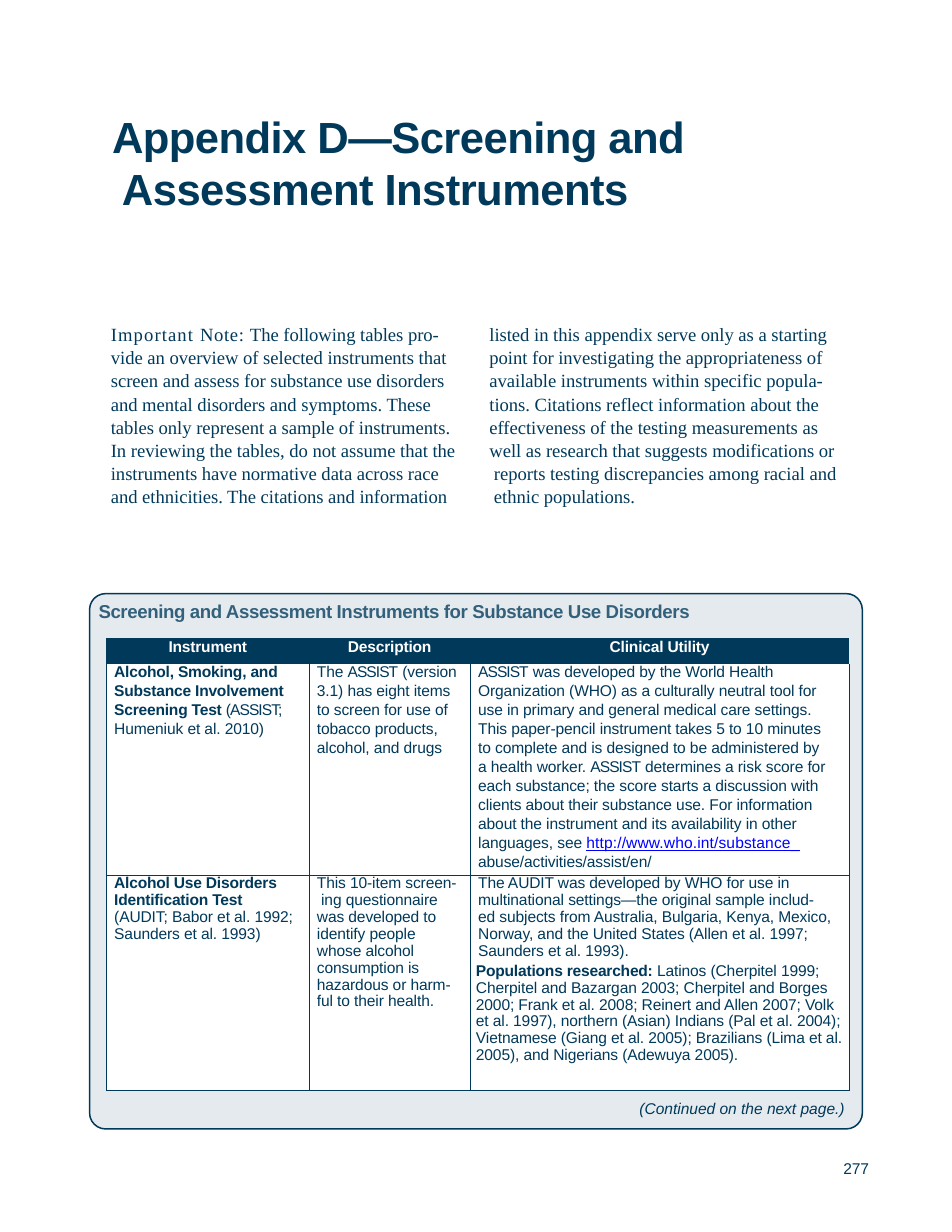
from copy import deepcopy
from dataclasses import dataclass
from itertools import zip_longest

from lxml import etree
from pptx import Presentation
from pptx import util as u
from pptx.dml.color import RGBColor
from pptx.enum import shapes, text
from pptx.oxml.ns import qn


@dataclass(frozen=True)
class Theme:
    navy: str = "00395A"
    slate: str = "33617B"
    white: str = "FFFFFF"
    link: str = "0000FF"
    sans: str = "Arial"
    serif: str = "Times New Roman"
    title: float = 28
    body: float = 12
    table: float = 10
    rule: float = 0.5
    frame: float = 0.96


THEME = Theme()
COLUMNS, ROWS = 85, 110
CELL = u.Inches(0.1)

SANS = dict(font=THEME.sans, size=THEME.table, color=THEME.navy, track=-0.05)
TITLE = SANS | dict(size=THEME.title, bold=True, track=-0.35)
SERIF = SANS | dict(font=THEME.serif, size=THEME.body, track=-0.03)
CAPTION = SANS | dict(size=THEME.body, color=THEME.slate, bold=True, track=-0.25)
HEADING = SANS | dict(color=THEME.white, bold=True, track=-0.1)
BOLD = dict(bold=True, track=-0.1)
ASSIST = ("ASSIST", dict(track=-0.6))

NOTE_LEFT = [
    ("Important ", dict(track=0.7)), ("Note: ", dict(track=0.4)),
    "The following tables pro-\nvide an overview of selected instruments that\n"
    "screen and assess for substance use disorders\n"
    "and mental disorders and symptoms. These\n"
    "tables only represent a sample of instruments.\n"
    "In reviewing the tables, do not assume that the\n"
    "instruments have normative data across race\n"
    "and ethnicities. The citations and information",
]
NOTE_RIGHT = [
    "listed in this appendix serve only as a starting\n"
    "point for investigating the appropriateness of\n"
    "available instruments within specific popula-\n"
    "tions. Citations reflect information about the\n"
    "effectiveness of the testing measurements as\n"
    "well as research that suggests modifications or\n"
    " reports testing discrepancies among racial and\n"
    " ethnic populations.",
]

HEADINGS = ["Instrument", "Description", "Clinical Utility"]
ASSIST_NAME = [
    [("Alcohol, Smoking, and", BOLD)],
    [("Substance Involvement", BOLD)],
    [("Screening Test ", BOLD), ("(ASSIST;", dict(track=-0.6))],
    ["Humeniuk et al. 2010)"],
]
ASSIST_DESCRIPTION = [
    ["The ", ASSIST, " (version"],
    ["3.1) has eight items"],
    ["to screen for use of"],
    ["tobacco products,"],
    ["alcohol, and drugs"],
]
ASSIST_UTILITY = [
    [ASSIST, " was developed by the World Health"],
    ["Organization (WHO) as a culturally neutral tool for"],
    ["use in primary and general medical care settings."],
    ["This paper-pencil instrument takes 5 to 10 minutes"],
    ["to complete and is designed to be administered by"],
    ["a health worker. ", ASSIST, " determines a risk score for"],
    ["each substance; the score starts a discussion with"],
    ["clients about their substance use. For information"],
    ["about the instrument and its availability in other"],
    ["languages, see ",
     ("http://www.who.int/substance_", dict(color=THEME.link, underline=True, track=0.1))],
    ["abuse/activities/assist/en/"],
]
AUDIT = [
    [[("Alcohol Use Disorders\nIdentification Test\n", BOLD),
      "(AUDIT; Babor et al. 1992;\nSaunders et al. 1993)"]],
    [["This 10-item screen-\n ing questionnaire\nwas developed to\nidentify people\n"
      "whose alcohol\nconsumption is\nhazardous or harm-\nful to their health."]],
    [["The AUDIT was developed by WHO for use in\n"
      "multinational settings—the original sample includ-\n"
      "ed subjects from Australia, Bulgaria, Kenya, Mexico,\n"
      "Norway, and the United States (Allen et al. 1997;\n"
      "Saunders et al. 1993)."],
     [("Populations researched: ", BOLD),
      "Latinos (Cherpitel 1999;\nCherpitel and Bazargan 2003; Cherpitel and Borges\n"
      "2000; Frank et al. 2008; Reinert and Allen 2007; Volk\n"
      "et al. 1997), northern (Asian) Indians (Pal et al. 2004);\n"
      "Vietnamese (Giang et al. 2005); Brazilians (Lima et al.\n"
      "2005), and Nigerians (Adewuya 2005)."]],
]


def grid(*cells):
    return [round(cell * CELL) for cell in cells]


def add_runs(paragraph, runs, style):
    for entry in runs:
        words, changes = (entry, {}) if isinstance(entry, str) else entry
        look = style | changes
        for index, line in enumerate(words.split("\n")):
            if index:
                paragraph.add_line_break()
                paragraph._p[-1].append(deepcopy(run.font._element))
            if not line and index:
                continue
            run = paragraph.add_run()
            run.text = line
            font = run.font
            font.name, font.size = look["font"], u.Pt(look["size"])
            font.bold = look.get("bold", False)
            font.italic = look.get("italic", False)
            font.underline = look.get("underline", False)
            font.color.rgb = RGBColor.from_string(look["color"])
            font._element.set("spc", str(round(look["track"] * 100)))


def format_paragraph(paragraph, spacing=None, before=0, indent=0, align=text.PP_ALIGN.LEFT):
    paragraph.alignment = align
    paragraph.space_before = u.Pt(before)
    if spacing:
        paragraph.line_spacing = spacing
    paragraph._p.get_or_add_pPr().set("marL", str(u.Inches(indent)))
    paragraph._p.get_or_add_pPr().set("indent", "0")


def prepare_frame(frame, top=0.01):
    frame.word_wrap = True
    frame.auto_size = text.MSO_AUTO_SIZE.NONE
    frame.vertical_anchor = text.MSO_ANCHOR.TOP
    frame.margin_left = frame.margin_right = frame.margin_bottom = 0
    frame.margin_top = u.Inches(top)


def add_title(slide, words, place):
    title = slide.shapes.title
    title.left, title.top, title.width, title.height = grid(*place)
    prepare_frame(title.text_frame, 0.03)
    heading = title.text_frame.paragraphs[0]
    format_paragraph(heading, u.Pt(33.2), 2.4, 0.01)
    add_runs(heading, [words], TITLE)


def add_text(slide, runs, place, style, **layout):
    frame = slide.shapes.add_textbox(*grid(*place)).text_frame
    prepare_frame(frame)
    format_paragraph(frame.paragraphs[0], indent=0.01, **layout)
    add_runs(frame.paragraphs[0], runs, style)
    return frame


def add_panel(slide, place):
    panel = slide.shapes.add_shape(shapes.MSO_SHAPE.ROUNDED_RECTANGLE, *grid(*place))
    panel.adjustments[0] = 0.03
    panel.shadow.inherit = False
    panel.fill.solid()
    panel.fill.fore_color.rgb = RGBColor.from_string(THEME.navy)
    tint = panel._element.spPr.find(f"{qn('a:solidFill')}/{qn('a:srgbClr')}")
    etree.SubElement(tint, qn("a:alpha"), val="10000")
    panel.line.color.rgb = RGBColor.from_string(THEME.navy)
    panel.line.width = u.Pt(THEME.frame)


def format_cell(cell, fill, ruled):
    cell.margin_left = cell.margin_right = cell.margin_bottom = 0
    cell.margin_top = 0
    properties = cell._tc.get_or_add_tcPr()
    for side in "LRTB":
        border = etree.SubElement(properties, qn(f"a:ln{side}"), w=str(u.Pt(THEME.rule)))
        if side in ruled:
            paint = etree.SubElement(border, qn("a:solidFill"))
            etree.SubElement(paint, qn("a:srgbClr"), val=THEME.navy)
        else:
            etree.SubElement(border, qn("a:noFill"))
    cell.fill.solid()
    cell.fill.fore_color.rgb = RGBColor.from_string(fill)


def add_instruments(slide, left, top):
    lines = list(zip_longest(ASSIST_NAME, ASSIST_DESCRIPTION, ASSIST_UTILITY))
    widths = [18.1, 14.4, 33.8]
    heights = [2.3] + [1.7] * (len(lines) - 1) + [1.9, 19.2]
    place = grid(left, top, sum(widths), sum(heights))
    table = slide.shapes.add_table(len(heights), len(widths), *place).table
    table.first_row = table.horz_banding = False
    for column, width in zip(table.columns, grid(*widths)):
        column.width = width
    for row, height in zip(table.rows, grid(*heights)):
        row.height = height
    last = len(lines)
    for index, heading in enumerate(HEADINGS):
        cell = table.cell(0, index)
        format_cell(cell, THEME.navy, "")
        paragraph = cell.text_frame.paragraphs[0]
        format_paragraph(paragraph, before=1.3, align=text.PP_ALIGN.CENTER)
        add_runs(paragraph, [heading], HEADING)
    for number, line in enumerate(lines, 1):
        for index, runs in enumerate(line):
            cell = table.cell(number, index)
            format_cell(cell, THEME.white, "LRB" if number == last else "LR")
            paragraph = cell.text_frame.paragraphs[0]
            format_paragraph(paragraph, u.Pt(11), 0.6 if number == 1 else 0, 0.07)
            add_runs(paragraph, runs or [], SANS)
            if not runs:
                etree.SubElement(paragraph._p, qn("a:endParaRPr"), sz="800")
    for index, paragraphs in enumerate(AUDIT):
        cell = table.cell(last + 1, index)
        format_cell(cell, THEME.white, "LRTB")
        for order, runs in enumerate(paragraphs):
            frame = cell.text_frame
            paragraph = frame.add_paragraph() if order else frame.paragraphs[0]
            format_paragraph(paragraph, 0.97, 2.1 if order else 1.5, 0.05 if order else 0.07)
            add_runs(paragraph, runs, SANS)


def main():
    deck = Presentation()
    deck.slide_width, deck.slide_height = grid(COLUMNS, ROWS)
    slide = deck.slides.add_slide(deck.slide_layouts[5])
    add_title(slide, "Appendix D—Screening and\n Assessment Instruments", (9.9, 9.6, 56, 9.6))
    for runs, left in ((NOTE_LEFT, 9.8), (NOTE_RIGHT, 43.6)):
        add_text(slide, runs, (left, 28.7, 32.5, 16.3), SERIF, before=1, spacing=1.03)
    add_panel(slide, (8, 53, 69, 47.8))
    add_text(slide, ["Screening and Assessment Instruments for Substance Use Disorders"],
             (8.7, 53.5, 60, 2.3), CAPTION, before=1)
    add_instruments(slide, 9.5, 57)
    footer = add_text(slide, ["(Continued on the next page.)"], (57, 98, 20.6, 7.1),
                      SANS | dict(italic=True, track=0), before=0.9)
    page = footer.add_paragraph()
    format_paragraph(page, before=26.5, align=text.PP_ALIGN.RIGHT)
    add_runs(page, ["277"], SANS)
    deck.save("out.pptx")


if __name__ == "__main__":
    main()
